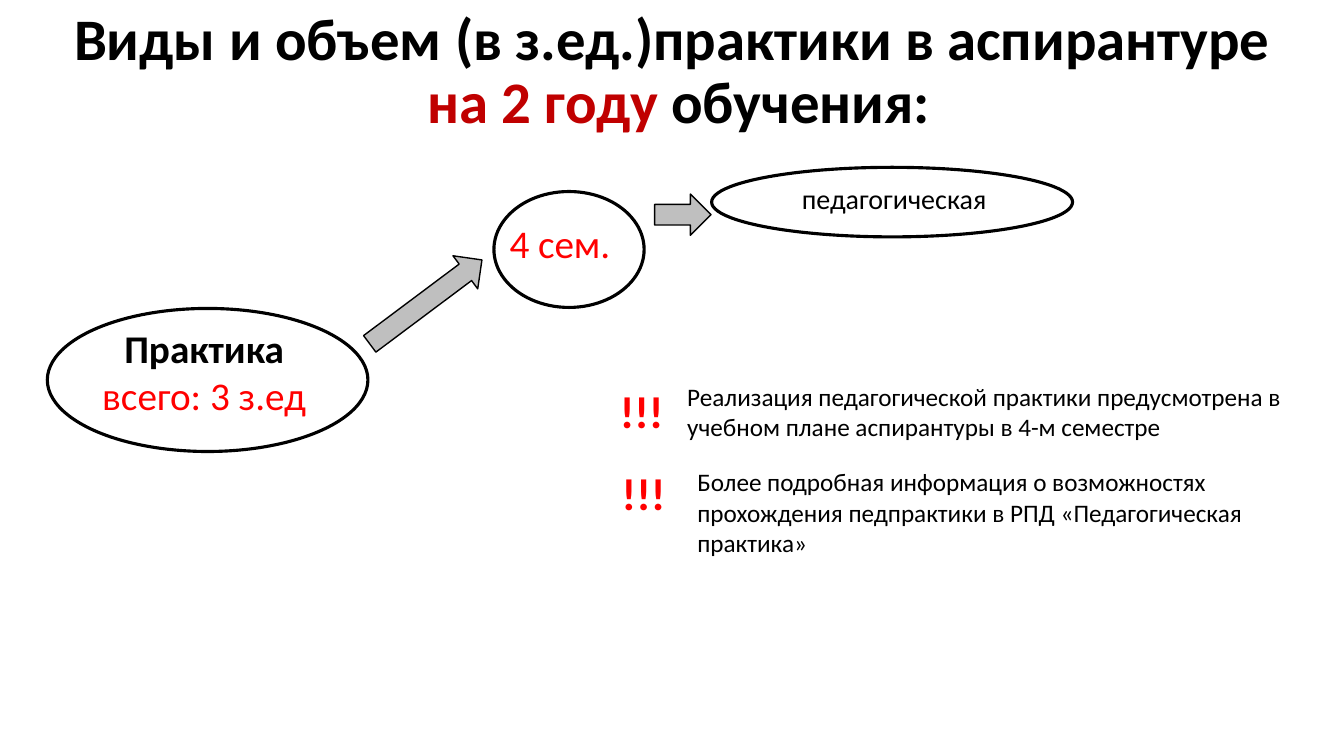
from pptx import Presentation
from pptx.util import Pt
from pptx.dml.color import RGBColor as Rgb
from pptx.enum.shapes import MSO_SHAPE as Geo
from pptx.enum.text import MSO_ANCHOR as Anchor, PP_ALIGN as Align

HUES = {"ink": "000000", "red": "FF0000", "dark": "C00000", "gray": "BFBFBF"}


class Page:
    """Draws the elements of one slide in a shared style."""

    font = "Calibri"

    def __init__(self, slide):
        self.shapes = slide.shapes

    def hue(self, name):
        return Rgb.from_string(HUES[name])

    def text(self, box, *paras, size=18, hue="ink", bold=False,
             align=Align.LEFT, anchor=Anchor.TOP, space=1.0):
        frame = self.shapes.add_textbox(*map(Pt, box)).text_frame
        frame.word_wrap = True
        frame.vertical_anchor = anchor
        for i, runs in enumerate(paras):
            para = frame.add_paragraph() if i else frame.paragraphs[0]
            para.alignment = align
            para.line_spacing = space
            for words, form in runs:
                if words == "\n":
                    para.add_line_break()
                    continue
                run = para.add_run()
                run.text = words
                run.font.name = self.font
                run.font.size = Pt(size)
                run.font.bold = form.get("bold", bold)
                run.font.color.rgb = self.hue(form.get("hue", hue))

    def shape(self, kind, box, width, fill=None, turn=0):
        item = self.shapes.add_shape(kind, *map(Pt, box))
        item.shadow.inherit = False
        item.rotation = turn
        item.line.color.rgb = self.hue("ink")
        item.line.width = Pt(width)
        if fill:
            item.fill.solid()
            item.fill.fore_color.rgb = self.hue(fill)
        else:
            item.fill.background()

    def oval(self, *box):
        self.shape(Geo.OVAL, box, 2.25)

    def arrow(self, *box, turn):
        self.shape(Geo.DOWN_ARROW, box, 1, "gray", turn)

    def note(self, left, top, high, mark, words):
        self.text((left, top, 445.7, high), [(words, {})])
        self.text((*mark, 51.1, 46.1), [("!!!", {})],
                  size=32, hue="red", bold=True)


def main():
    deck = Presentation()
    deck.slide_width, deck.slide_height = Pt(960), Pt(540)
    page = Page(deck.slides.add_slide(deck.slide_layouts[6]))

    page.text((33.8, 0, 902.2, 104.4),
              [("Виды и объем (в з.ед.)практики в аспирантуре ", {}),
               ("\n", {}),
               ("на 2 году ", {"hue": "dark"}),
               ("обучения:", {})],
              size=42, bold=True, align=Align.CENTER,
              anchor=Anchor.MIDDLE, space=0.9)

    page.text((36.7, 228.2, 218.2, 74.9),
              [("Практика", {"bold": True})],
              [("всего: 3 з.ед", {"hue": "red"})],
              size=28, align=Align.CENTER)
    page.arrow(289.4, 165.6, 29.5, 100.1, turn=233.2)
    page.oval(33.8, 220.3, 229, 102.2)

    page.oval(352.8, 136.8, 107.3, 82.8)
    page.text((339.1, 153.4, 121.7, 41), [("4 сем.", {})],
              size=28, hue="red", align=Align.CENTER)
    page.arrow(473, 133.2, 29.5, 40.3, turn=270)

    page.oval(508.3, 119.5, 257.8, 49.7)
    page.text((537.1, 126, 198.7, 31.7), [(" педагогическая", {})],
              size=20, align=Align.CENTER)

    page.note(483.8, 268.6, 51.1, (435.6, 270.7),
              "Реализация педагогической практики предусмотрена в "
              "учебном плане аспирантуры в 4-м семестре")
    page.note(491, 329.8, 72.7, (437, 329),
              "Более подробная информация о возможностях прохождения "
              "педпрактики в РПД «Педагогическая практика»")

    deck.save("out.pptx")


if __name__ == "__main__":
    main()
